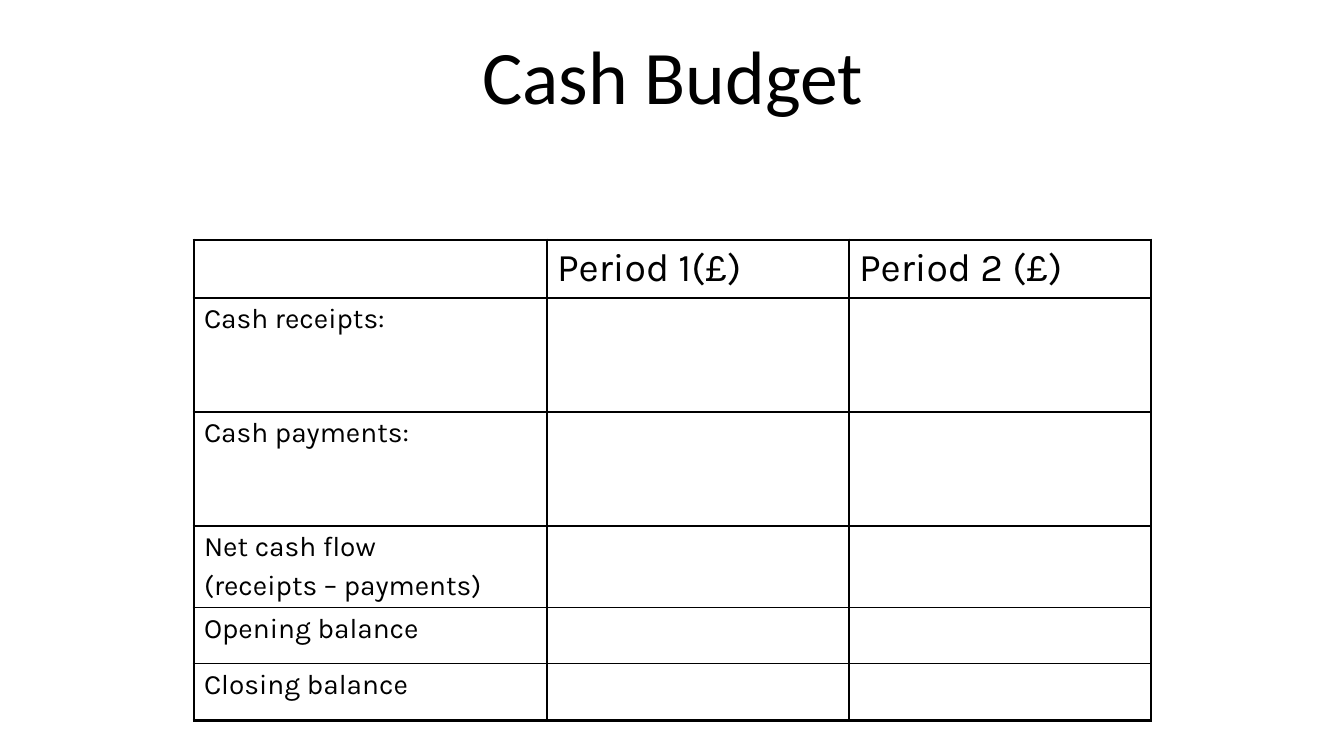
"""Build the Cash Budget slide: a title and a budget table for two periods."""
from dataclasses import dataclass

from lxml import etree
from pptx import Presentation
from pptx.dml.color import RGBColor
from pptx.enum.text import MSO_ANCHOR, MSO_AUTO_SIZE, PP_ALIGN
from pptx.oxml.ns import qn
from pptx.slide import Slide
from pptx.table import _Cell
from pptx.util import Emu, Pt

CENTER = PP_ALIGN.CENTER
BOTTOM = MSO_ANCHOR.BOTTOM
NO_AUTOFIT = MSO_AUTO_SIZE.NONE
BLACK = RGBColor(0, 0, 0)
TITLE_FONT = "Calibri"
TABLE_FONT = "Karla"
EMU_PER_PX = 914400 / 100.8
OUTER_RULE = Pt(2.25)
INNER_RULE = Pt(1)
COLUMN_WIDTHS = (353, 302, 302)


@dataclass(frozen=True)
class BudgetRow:
    height: int
    texts: tuple[str, str, str]
    size: int = 20


BUDGET_ROWS = (
    BudgetRow(56, ("", "Period 1(£)", "Period 2 (£)"), 28),
    BudgetRow(114, ("Cash receipts:", "", "")),
    BudgetRow(114, ("Cash payments:", "", "")),
    BudgetRow(81, ("Net cash flow\n(receipts – payments)", "", "")),
    BudgetRow(56, ("Opening balance", "", "")),
    BudgetRow(57, ("Closing balance", "", "")),
)


def px(length: int) -> Emu:
    return Emu(round(length * EMU_PER_PX))


def add_title(slide: Slide, text: str) -> None:
    title = slide.shapes.title
    title.left, title.top, title.width, title.height = map(px, (244, 50, 857, 76))
    frame = title.text_frame
    frame.text = text
    frame.auto_size = NO_AUTOFIT
    frame.vertical_anchor = BOTTOM
    heading = frame.paragraphs[0]
    heading.alignment = CENTER
    heading.line_spacing = 0.9
    font = heading.runs[0].font
    font.name, font.size, font.color.rgb = TITLE_FONT, Pt(54), BLACK


def set_borders(cell: _Cell, outer_sides: dict[str, bool]) -> None:
    properties = cell._tc.get_or_add_tcPr()
    for index, (side, is_outer) in enumerate(outer_sides.items()):
        rule = etree.Element(qn(f"a:ln{side}"), w=str(OUTER_RULE if is_outer else INNER_RULE))
        fill = etree.SubElement(rule, qn("a:solidFill"))
        etree.SubElement(fill, qn("a:srgbClr"), val=str(BLACK))
        properties.insert(index, rule)


def fill_cell(cell: _Cell, text: str, size: int) -> None:
    cell.fill.background()
    cell.text_frame.text = text
    for index, paragraph in enumerate(cell.text_frame.paragraphs):
        if index:
            paragraph.space_before = Pt(size * 0.2)
        paragraph.font.size = Pt(size)
        for run in paragraph.runs:
            font = run.font
            font.name, font.size, font.color.rgb = TABLE_FONT, Pt(size), BLACK


def add_budget_table(slide: Slide) -> None:
    last_row, last_column = len(BUDGET_ROWS) - 1, len(COLUMN_WIDTHS) - 1
    height = sum(row.height for row in BUDGET_ROWS)
    table = slide.shapes.add_table(
        len(BUDGET_ROWS), len(COLUMN_WIDTHS),
        px(194), px(240), px(sum(COLUMN_WIDTHS)), px(height),
    ).table
    table.first_row = table.horz_banding = False
    for column, width in zip(table.columns, COLUMN_WIDTHS):
        column.width = px(width)
    for r, row in enumerate(BUDGET_ROWS):
        table.rows[r].height = px(row.height)
        for c, text in enumerate(row.texts):
            cell = table.cell(r, c)
            fill_cell(cell, text, row.size)
            set_borders(cell, {"L": c == 0, "R": c == last_column,
                               "T": r == 0, "B": r == last_row})


def main() -> None:
    presentation = Presentation()
    presentation.slide_width, presentation.slide_height = px(1344), px(756)
    slide = presentation.slides.add_slide(presentation.slide_layouts[5])
    add_title(slide, "Cash Budget")
    add_budget_table(slide)
    presentation.save("out.pptx")


if __name__ == "__main__":
    main()
